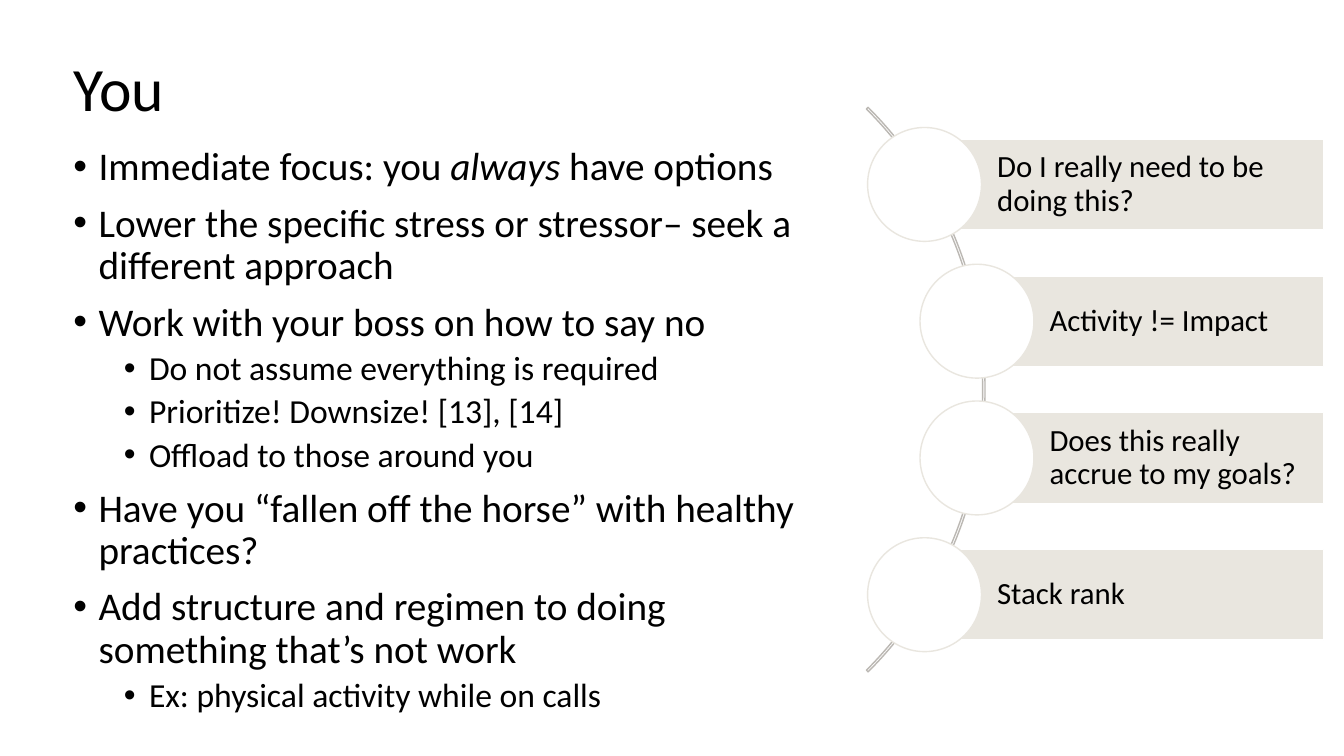
from dataclasses import dataclass
from lxml.etree import SubElement
from pptx import Presentation
from pptx.dml.color import RGBColor as Rgb
from pptx.enum.shapes import MSO_SHAPE as Kind
from pptx.enum.text import MSO_ANCHOR as Anchor, MSO_AUTO_SIZE as Fit, PP_ALIGN as Align
from pptx.oxml.ns import qn
from pptx.util import Pt


@dataclass(frozen=True)
class Theme:
    font: str = "Calibri"
    ink: str = "000000"
    paper: str = "FFFFFF"
    sand: str = "E9E6DF"
    arc: str = "BBB8B3"
    title: int = 44
    body: tuple = (28, 24)
    gaps: tuple = (10, 5)
    label: int = 22


THEME = Theme()
WIDTH, HEIGHT = 1333, 750

# Each point: level, then parts of text that alternate plain and italic
POINTS = [
    (0, "Immediate focus: you ", "always", " have options"),
    (0, "Lower the specific stress or stressor– seek a different approach"),
    (0, "Work with your boss on how to say no"),
    (1, "Do not assume everything is required"),
    (1, "Prioritize! Downsize! [13], [14]"),
    (1, "Offload to those around you"),
    (0, "Have you “fallen off the horse” with healthy practices?"),
    (0, "Add structure and regimen to doing something that’s not work"),
    (1, "Ex: physical activity while on calls"),
]
# Each step: shift to the right along the arc, label
STEPS = [
    (0, "Do I really need to be doing this?"),
    (52, "Activity != Impact"),
    (52, "Does this really accrue to my goals?"),
    (0, "Stack rank"),
]


def px(n):
    """100 px to the inch."""
    return int(n * 9144)


def style(par, size):
    par.alignment = Align.LEFT
    par.line_spacing = 0.9
    for run in par.runs:
        run.font.name = THEME.font
        run.font.size = Pt(size)
        run.font.color.rgb = Rgb.from_string(THEME.ink)


def bullet(par, left, hang):
    props = par._p.get_or_add_pPr()
    props.set("marL", str(px(left)))
    props.set("indent", str(-px(hang)))
    SubElement(props, qn("a:buFont"), typeface="Arial")
    SubElement(props, qn("a:buChar"), char="•")


def draw(slide, kind, box, line, fill=None):
    shape = slide.shapes.add_shape(kind, *map(px, box))
    shape.shadow.inherit = False
    shape.line.color.rgb = Rgb.from_string(line)
    shape.line.width = Pt(1)
    if fill:
        shape.fill.solid()
        shape.fill.fore_color.rgb = Rgb.from_string(fill)
    else:
        shape.fill.background()
    return shape


def add_title(slide, box, text):
    title = slide.shapes.title
    title.left, title.top, title.width, title.height = map(px, box)
    frame = title.text_frame
    frame.text = text
    frame.auto_size = Fit.NONE
    frame.vertical_anchor = Anchor.MIDDLE
    style(frame.paragraphs[0], THEME.title)


def add_points(slide, box, points):
    frame = slide.shapes.add_textbox(*map(px, box)).text_frame
    frame.word_wrap = True
    for i, (level, *parts) in enumerate(points):
        par = frame.add_paragraph() if i else frame.paragraphs[0]
        par.level = level
        for j, part in enumerate(parts):
            run = par.add_run()
            run.text = part
            run.font.italic = j % 2 == 1
        style(par, THEME.body[level])
        par.space_before = Pt(THEME.gaps[level])
        bullet(par, 25 + 50 * level, 25)


def add_step(slide, box, text):
    x, y, w, h = box
    bar = draw(slide, Kind.RECTANGLE, box, THEME.paper, THEME.sand)
    frame = bar.text_frame
    frame.word_wrap = True
    frame.vertical_anchor = Anchor.MIDDLE
    frame.margin_left = px(72)
    frame.margin_top = frame.margin_right = frame.margin_bottom = px(6)
    frame.text = text
    style(frame.paragraphs[0], THEME.label)
    # Disc centred on the left end of the bar
    disc = 113
    spot = (x - disc / 2, y + h / 2 - disc / 2, disc, disc)
    draw(slide, Kind.OVAL, spot, THEME.sand, THEME.paper)


def add_steps(slide, box, steps):
    x, y, w, h = box
    # Arc behind the steps
    side = 792
    arc = draw(slide, Kind.BLOCK_ARC,
               (x - 675, y + h / 2 - side / 2, side, side), THEME.arc)
    for i, value in enumerate((189, 27, 0.003)):
        arc.adjustments[i] = value
    # Evenly spaced bars, all ending at the right edge
    bar, inset = 90, 57
    pitch = (h - bar) / (len(steps) - 1)
    for i, (shift, text) in enumerate(steps):
        left = inset + shift
        add_step(slide, (x + left, y + i * pitch, w - left, bar), text)


def main():
    deck = Presentation()
    deck.slide_width, deck.slide_height = px(WIDTH), px(HEIGHT)
    slide = deck.slides.add_slide(deck.slide_layouts[5])
    add_title(slide, (63, 40, 1218, 101), "You")
    add_points(slide, (63, 141, 773, 575), POINTS)
    add_steps(slide, (860, 138, 453, 497), STEPS)
    deck.save("out.pptx")


if __name__ == "__main__":
    main()
